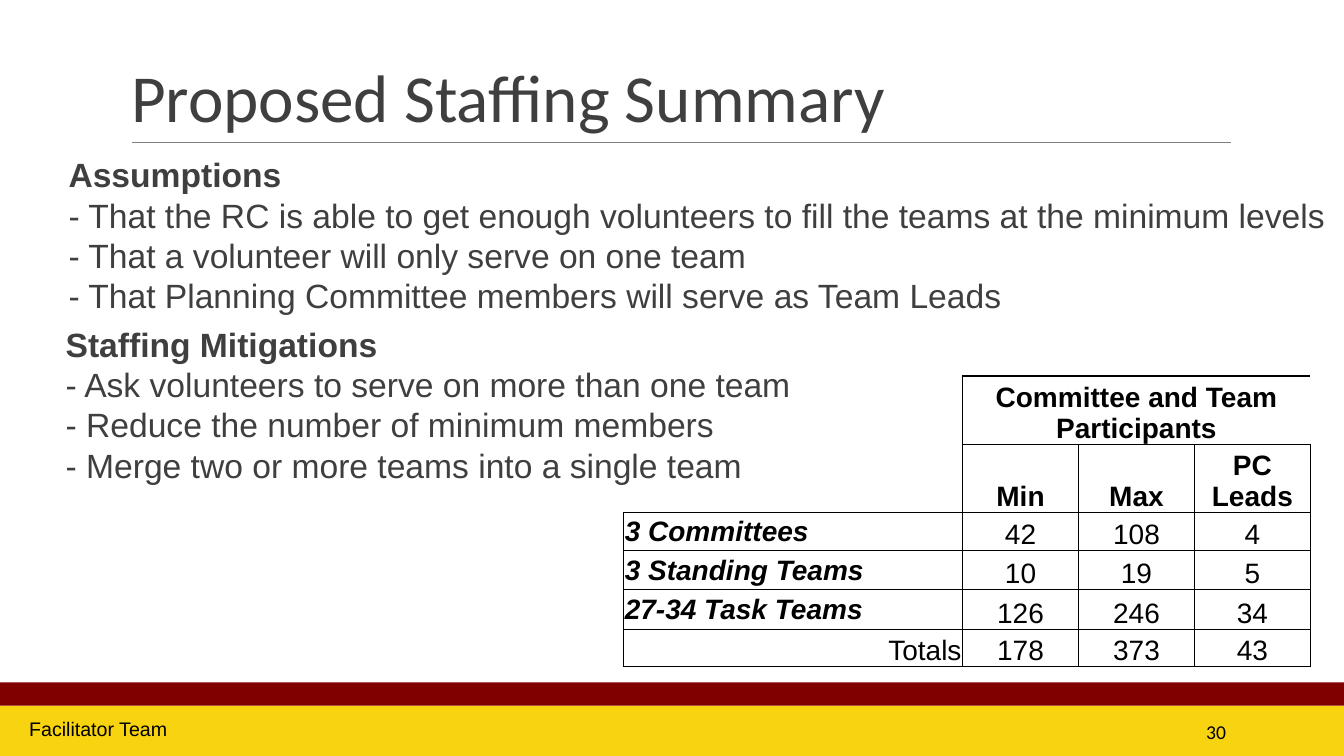
from dataclasses import dataclass

from pptx import Presentation
from pptx.dml.color import RGBColor
from pptx.enum.shapes import MSO_CONNECTOR, MSO_SHAPE
from pptx.enum.text import MSO_ANCHOR, PP_ALIGN
from pptx.oxml.ns import qn
from pptx.util import Inches, Pt
from lxml import etree

RECT, STRAIGHT = MSO_SHAPE.RECTANGLE, MSO_CONNECTOR.STRAIGHT
TOP, MIDDLE, BOTTOM = MSO_ANCHOR.TOP, MSO_ANCHOR.MIDDLE, MSO_ANCHOR.BOTTOM
LEFT, CENTER, RIGHT = PP_ALIGN.LEFT, PP_ALIGN.CENTER, PP_ALIGN.RIGHT


@dataclass(frozen=True)
class Theme:
    """Colours, fonts and type sizes of the deck."""
    gold: str = "F8D410"
    maroon: str = "800000"
    rule: str = "7F7F7F"
    ink: str = "3F3F3F"
    black: str = "000000"
    heading: str = "Calibri"
    text: str = "Arial"
    title_size: float = 48
    body_size: float = 24
    body_line: float = 28.8
    table_size: float = 20
    footer_size: float = 14


class Deck:
    """Builds one slide with lengths in percent of the slide's size."""

    def __init__(self, theme):
        """Open a presentation with one title-only slide."""
        self.theme = theme
        self.prs = Presentation()
        self.prs.slide_width, self.prs.slide_height = Inches(13.33), Inches(7.5)
        self.s = self.prs.slides.add_slide(self.prs.slide_layouts[5])

    def x(self, share):
        """Convert a share of the width."""
        return round(self.prs.slide_width * share / 100)

    def y(self, share):
        """Convert a share of the height."""
        return round(self.prs.slide_height * share / 100)

    def box(self, x, y, w, h):
        """Convert a left, top, width, height box."""
        return self.x(x), self.y(y), self.x(w), self.y(h)

    def apply(self, target, values):
        """Set attributes from a dict."""
        for name, value in values.items():
            setattr(target, name, value)

    def add_text(self, p, text, size, font, color, align=LEFT, **marks):
        """Add one formatted run to a paragraph."""
        p.alignment = align
        r = p.add_run()
        r.text = text
        self.apply(r.font, {"size": Pt(size), "name": font, **marks})
        r.font.color.rgb = RGBColor.from_string(color)

    def bar(self, y, h, color):
        """Draw a full-width band."""
        sp = self.s.shapes.add_shape(RECT, *self.box(0, y, 100, h))
        sp.shadow.inherit = False
        sp.fill.solid()
        sp.fill.fore_color.rgb = RGBColor.from_string(color)
        sp.line.fill.background()

    def rule(self, x1, x2, y):
        """Draw a thin horizontal line."""
        line = self.s.shapes.add_connector(STRAIGHT, self.x(x1), self.y(y), self.x(x2), self.y(y))
        line.line.width = Pt(0.75)
        line.line.color.rgb = RGBColor.from_string(self.theme.rule)
        etree.SubElement(line._element.spPr, qn("a:effectLst"))

    def title(self, text, *box):
        """Place and fill the title placeholder."""
        t, sp = self.theme, self.s.shapes.title
        self.apply(sp, dict(zip(("left", "top", "width", "height"), self.box(*box))))
        tf = sp.text_frame
        self.apply(tf, {"vertical_anchor": BOTTOM, "word_wrap": True})
        p = tf.paragraphs[0]
        p.line_spacing = 0.85
        self.add_text(p, text, t.title_size, t.heading, t.ink)

    def frame(self, box, **values):
        """Add a wrapping text box and return its frame."""
        tf = self.s.shapes.add_textbox(*self.box(*box)).text_frame
        self.apply(tf, {"word_wrap": True, "vertical_anchor": TOP, **values})
        return tf

    def section(self, lines, *box):
        """Add a bold heading followed by indented lines."""
        t = self.theme
        tf = self.frame(box, margin_left=0, margin_right=0)
        for i, text in enumerate(lines):
            p = tf.add_paragraph() if i else tf.paragraphs[0]
            pPr = p._p.get_or_add_pPr()
            pPr.set("marL", str(Inches(0.5)))
            pPr.set("indent", str(Inches(-0.38)))
            color = etree.SubElement(pPr, qn("a:buClr"))
            etree.SubElement(color, qn("a:srgbClr"), val=t.maroon)
            etree.SubElement(pPr, qn("a:buChar"), char=" ")
            p.line_spacing = Pt(t.body_line)
            self.add_text(p, text, t.body_size, t.text, t.ink, bold=i == 0)

    def footer(self, text, font, align, anchor, *box):
        """Add a small line of footer text."""
        t = self.theme
        tf = self.frame(box, vertical_anchor=anchor)
        self.add_text(tf.paragraphs[0], text, t.footer_size, font, t.black, align)

    def borders(self, cell, widths):
        """Set left, right, top and bottom borders in points."""
        tcPr = cell._tc.get_or_add_tcPr()
        for side, width in zip("LRTB", widths):
            ln = etree.SubElement(tcPr, qn(f"a:ln{side}"), w=str(Pt(width)))
            if width:
                fill = etree.SubElement(ln, qn("a:solidFill"))
                etree.SubElement(fill, qn("a:srgbClr"), val=self.theme.black)
            else:
                etree.SubElement(ln, qn("a:noFill"))

    def table(self, x, y, cols, heights, rows, uprights, levels):
        """Add the staffing table with a spanning header."""
        t = self.theme
        box = self.box(x, y, sum(cols), sum(heights))
        table = self.s.shapes.add_table(len(rows), len(cols), *box).table
        self.apply(table, {"first_row": False, "horz_banding": False})
        for col, width in zip(table.columns, cols):
            col.width = self.x(width)
        for row, height in zip(table.rows, heights):
            row.height = self.y(height)
        for i, row in enumerate(rows):
            for j, text in enumerate(row):
                cell = table.cell(i, j)
                self.borders(cell, (*uprights[i][j:j + 2], levels[i][j], levels[i + 1][j]))
                cell.fill.background()
                label = j == 0 and i < len(rows) - 1
                align = CENTER if j else LEFT if label else RIGHT
                self.apply(cell, {"vertical_anchor": MIDDLE if label else BOTTOM,
                                  "margin_left": Inches(0.01), "margin_right": Inches(0.01),
                                  "margin_top": Inches(0.01), "margin_bottom": 0})
                if text:
                    self.add_text(cell.text_frame.paragraphs[0], text, t.table_size, t.text,
                                  t.black, align, bold=i < 2 or label, italic=label)
        table.cell(0, 0).merge(table.cell(1, 0))
        table.cell(0, 1).merge(table.cell(0, len(cols) - 1))


def main():
    """Build and save the staffing slide."""
    t = Theme()
    d = Deck(t)
    d.bar(93.33, 6.67, t.gold)
    d.bar(90.27, 3.06, t.maroon)
    d.rule(9.83, 91.57, 18.8)
    d.title("Proposed Staffing Summary", 9, 4.13, 82.5, 14.53)
    d.section(["Assumptions",
               "- That the RC is able to get enough volunteers to fill the teams at the minimum levels",
               "- That a volunteer will only serve on one team",
               "- That Planning Committee members will serve as Team Leads"],
              1.35, 19.73, 97.75, 24.13)
    d.footer("30", t.heading, RIGHT, MIDDLE, 81.23, 94.13, 10.73, 5.33)
    rows = [["", "Committee and Team Participants", "", ""],
            ["", "Min", "Max", "PC Leads"],
            ["3 Committees", "42", "108", "4"],
            ["3 Standing Teams", "10", "19", "5"],
            ["27-34 Task Teams", "126", "246", "34"],
            ["Totals", "178", "373", "43"]]
    thin, thick = 0.5, 1
    uprights = [(0, thick, 0, 0, thick), (0, thick, thin, thin, thick),
                *[(thick, thin, thin, thin, thick)] * 3,
                (thin, thick, thin, thin, thick)]
    levels = [(0, *[thick] * 3), (0, *[thin] * 3), [thick] * 4, [thin] * 4, [thin] * 4,
              [thick] * 4, (thin, *[thick] * 3)]
    d.table(46.41, 49.73, [25.21] + [8.63] * 3, [4.93, 4.93, 5.07, 5.07, 5.33, 4.93],
            rows, uprights, levels)
    d.section(["Staffing Mitigations",
               "- Ask volunteers to serve on more than one team",
               "- Reduce the number of minimum members",
               "- Merge two or more teams into a single team"],
              1.13, 42.13, 67.97, 24.13)
    d.footer("Facilitator Team", t.text, LEFT, TOP, 1.43, 94.13, 17.03, 4.53)
    d.prs.save("out.pptx")


if __name__ == "__main__":
    main()
